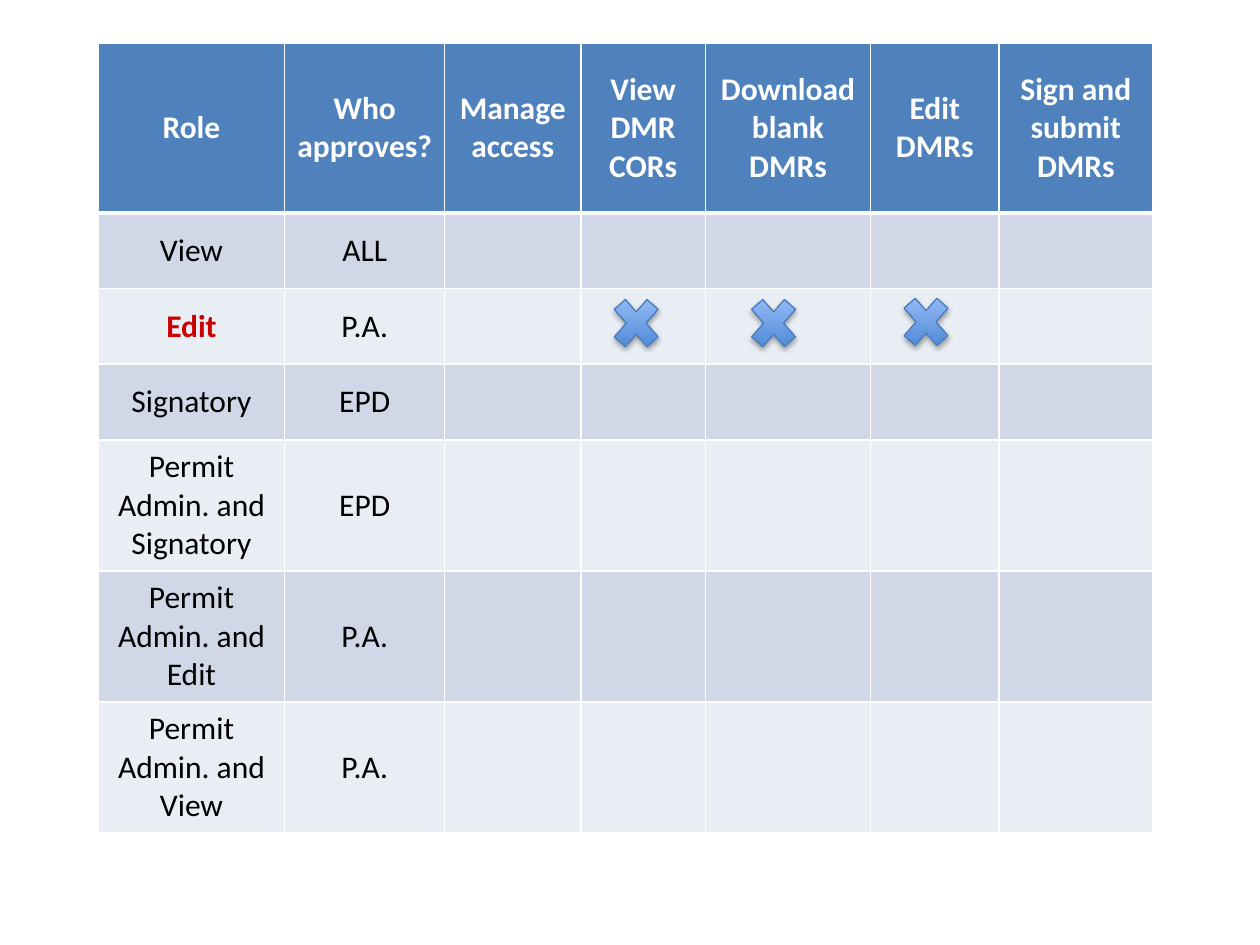
from dataclasses import dataclass

from lxml.etree import SubElement
from pptx import Presentation
from pptx.dml.color import RGBColor
from pptx.enum.shapes import MSO_SHAPE
from pptx.enum.text import MSO_ANCHOR, PP_ALIGN
from pptx.oxml.ns import qn
from pptx.slide import Slide
from pptx.table import _Cell
from pptx.util import Emu, Pt

EMU_PER_PX = 9144  # 100 px to the inch


@dataclass(frozen=True)
class Theme:
    font: str = "Calibri"
    text_size: int = 18
    header: str = "4F81BD"
    bands: tuple[str, str] = ("D0D8E8", "E9EDF4")
    white: str = "FFFFFF"
    text: str = "000000"
    accent: str = "CC0000"
    mark_bottom: str = "3F80CE"
    mark_top: str = "A4C4FF"
    mark_line: str = "4B7EBC"
    rule: int = 1
    header_rule: int = 3


@dataclass(frozen=True)
class Role:
    name: str
    approver: str
    height: int
    highlighted: bool = False


@dataclass(frozen=True)
class Mark:
    left: int
    top: int
    width: int = 50
    height: int = 57


THEME = Theme()
TABLE_LEFT, TABLE_TOP, HEADER_HEIGHT = 78, 34, 135
COLUMNS = {
    "Role": 148,
    "Who approves?": 127,
    "Manage access": 108,
    "View DMR CORs": 99,
    "Download blank DMRs": 131,
    "Edit DMRs": 102,
    "Sign and submit DMRs": 122,
}
ROLES = [
    Role("View", "ALL", 60),
    Role("Edit", "P.A.", 60, highlighted=True),
    Role("Signatory", "EPD", 60),
    Role("Permit Admin. and Signatory", "EPD", 104),
    Role("Permit Admin. and Edit", "P.A.", 104),
    Role("Permit Admin. and View", "P.A.", 104),
]
MARKS = [Mark(480, 228), Mark(589, 228), Mark(710, 227)]


def px(length: int) -> Emu:
    return Emu(length * EMU_PER_PX)


def rgb(colour: str) -> RGBColor:
    return RGBColor.from_string(colour)


def draw_borders(cell: _Cell, top: int, bottom: int) -> None:
    widths = {"lnL": THEME.rule, "lnR": THEME.rule, "lnT": top, "lnB": bottom}
    properties = cell._tc.get_or_add_tcPr()
    for side, width in widths.items():
        border = SubElement(properties, qn(f"a:{side}"), w=str(Pt(width)))
        paint = SubElement(border, qn("a:solidFill"))
        SubElement(paint, qn("a:srgbClr"), val=THEME.white)


def fill_cell(cell: _Cell, wording: str, background: str, colour: str, bold: bool) -> None:
    cell.fill.solid()
    cell.fill.fore_color.rgb = rgb(background)
    cell.vertical_anchor = MSO_ANCHOR.MIDDLE
    cell.text = wording
    paragraph = cell.text_frame.paragraphs[0]
    paragraph.alignment = PP_ALIGN.CENTER
    font_format = {"name": THEME.font, "size": Pt(THEME.text_size), "bold": bold}
    for attribute, value in font_format.items():
        setattr(paragraph.font, attribute, value)
    paragraph.font.color.rgb = rgb(colour)


def draw_role_table(slide: Slide) -> None:
    heights = [HEADER_HEIGHT] + [role.height for role in ROLES]
    table = slide.shapes.add_table(
        len(heights), len(COLUMNS), px(TABLE_LEFT), px(TABLE_TOP),
        px(sum(COLUMNS.values())), px(sum(heights)),
    ).table
    for column, width in zip(table.columns, COLUMNS.values()):
        column.width = px(width)
    for row, height in zip(table.rows, heights):
        row.height = px(height)

    # Header row
    for cell, heading in zip(table.rows[0].cells, COLUMNS):
        draw_borders(cell, THEME.rule, THEME.header_rule)
        fill_cell(cell, heading, THEME.header, THEME.white, True)

    # One banded row per role, with the permission cells left open
    for index, role in enumerate(ROLES):
        wordings = [role.name, role.approver] + [""] * (len(COLUMNS) - 2)
        top = THEME.rule if index else THEME.header_rule
        for column, wording in enumerate(wordings):
            cell = table.cell(index + 1, column)
            stressed = role.highlighted and column == 0
            draw_borders(cell, top, THEME.rule)
            fill_cell(cell, wording, THEME.bands[index % 2],
                      THEME.accent if stressed else THEME.text, stressed)


def draw_mark(slide: Slide, mark: Mark) -> None:
    cross = slide.shapes.add_shape(
        MSO_SHAPE.MATH_MULTIPLY, px(mark.left), px(mark.top), px(mark.width), px(mark.height)
    )
    cross.fill.gradient()
    cross.fill.gradient_angle = 90
    for stop, colour in zip(cross.fill.gradient_stops, (THEME.mark_bottom, THEME.mark_top)):
        stop.color.rgb = rgb(colour)
    cross.line.color.rgb = rgb(THEME.mark_line)
    cross.line.width = Pt(0.75)

    # Soft shadow below
    cross.shadow.inherit = False
    effects = cross._element.spPr.find(qn("a:effectLst"))
    shadow = SubElement(effects, qn("a:outerShdw"), blurRad=str(Pt(3.1)),
                        dist=str(Pt(1.8)), dir="5400000", rotWithShape="0")
    shade = SubElement(shadow, qn("a:srgbClr"), val=THEME.text)
    SubElement(shade, qn("a:alpha"), val="35000")


def main() -> None:
    presentation = Presentation()
    presentation.slide_width, presentation.slide_height = px(1000), px(750)
    slide = presentation.slides.add_slide(presentation.slide_layouts[6])
    draw_role_table(slide)
    # Permissions of the Edit role
    for mark in MARKS:
        draw_mark(slide, mark)
    presentation.save("out.pptx")


if __name__ == "__main__":
    main()
